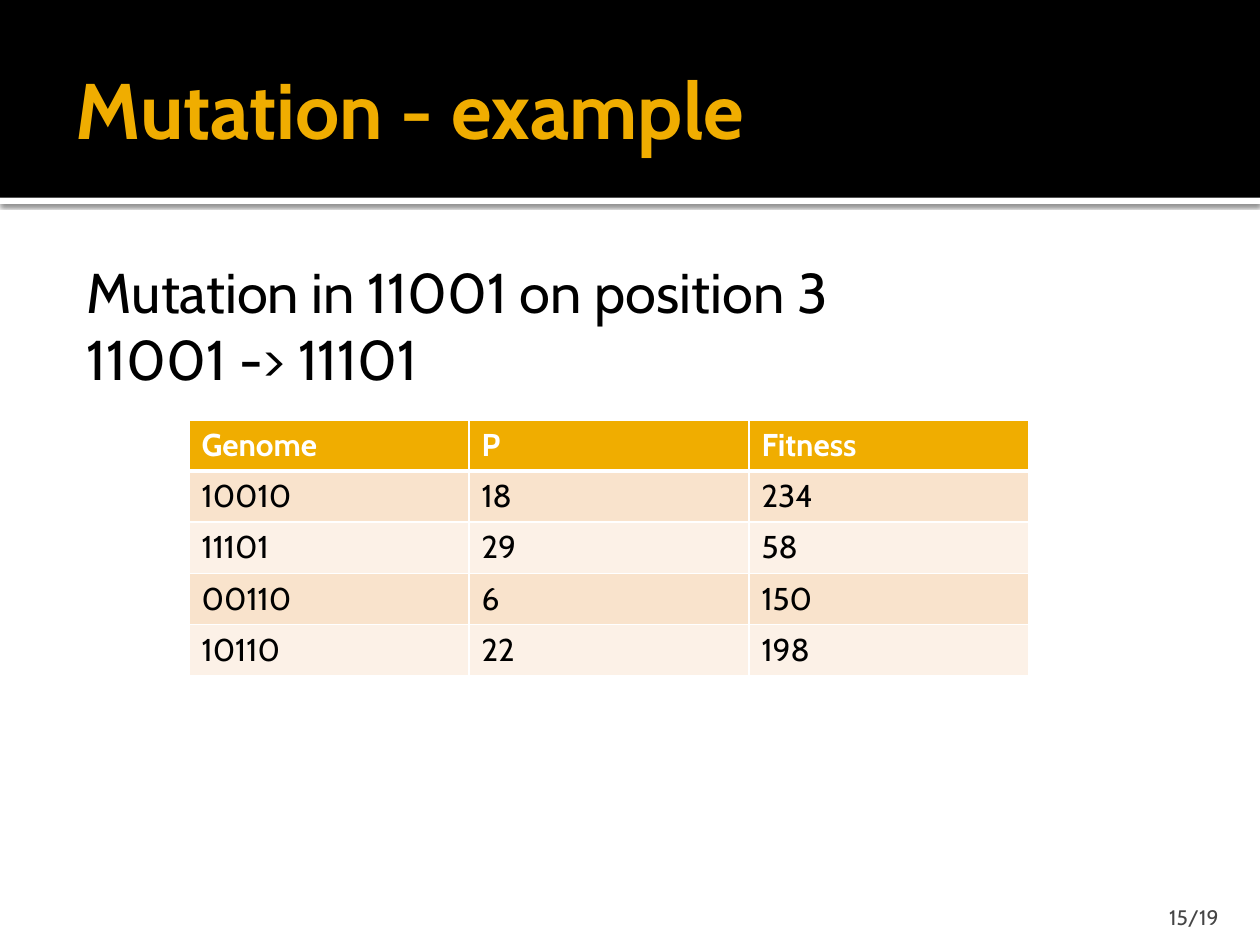
import pptx
import pptx.util
import pptx.dml.color
import pptx.enum.shapes
import pptx.enum.text
import pptx.oxml
import pptx.oxml.ns

Pt = pptx.util.Pt
RGB = pptx.dml.color.RGBColor.from_string
Align = pptx.enum.text.PP_ALIGN
Anchor = pptx.enum.text.MSO_ANCHOR
ns = pptx.oxml.ns.nsdecls("a")
hues = {"gold": "F0AD00", "black": "000000", "white": "FFFFFF",
        "peach": "F9E3CC", "cream": "FCF1E7", "grey": "454545"}


def style(para, size, hue, bold=False, align=Align.LEFT):
    form = {"size": Pt(size), "name": "Cabin", "bold": bold}
    for key, val in form.items():
        setattr(para.font, key, val)
    para.font.color.rgb = RGB(hues[hue])
    para.alignment = align


def place(shape, box, pads, anchor):
    for key, val in zip(("left", "top", "width", "height"), box):
        setattr(shape, key, Pt(val))
    frame = shape.text_frame
    form = dict(zip(("margin_left", "margin_top", "margin_right", "margin_bottom"), map(Pt, pads)))
    form.update(word_wrap=True, vertical_anchor=anchor, auto_size=pptx.enum.text.MSO_AUTO_SIZE.NONE)
    for key, val in form.items():
        setattr(frame, key, val)
    return frame


deck = pptx.Presentation()
deck.slide_width, deck.slide_height = Pt(720), Pt(540)
slide = deck.slides.add_slide(deck.slide_layouts[1])
title, body = slide.placeholders

for top, high, hue in ((113, 3.6, "white"), (0, 113, "black")):
    band = slide.shapes.add_shape(
        pptx.enum.shapes.MSO_SHAPE.RECTANGLE, 0, Pt(top), Pt(720), Pt(high))
    band.fill.solid()
    band.fill.fore_color.rgb = RGB(hues[hue])
    band.line.fill.background()
    band.shadow.inherit = False
    title.element.addprevious(band.element)
    if hue == "white":
        glow = band.element.spPr.find(pptx.oxml.ns.qn("a:effectLst"))
        glow.append(pptx.oxml.parse_xml(
            f'<a:outerShdw {ns} blurRad="{Pt(2.5)}" dist="{Pt(0.8)}" dir="5400000">'
            f'<a:srgbClr val="{hues["black"]}"><a:alpha val="60000"/></a:srgbClr></a:outerShdw>'))

frame = place(title, (36, 12.24, 648, 98.64), (7.2, 3.6, 3.6, 3.6), Anchor.MIDDLE)
frame.text = "Mutation - example"
style(frame.paragraphs[0], 45, "gold", True)

frame = place(body, (36, 139.68, 648, 364.32), (4.32, 7.2, 7.2, 3.6), Anchor.TOP)
frame.text = "Mutation in 11001 on position 3\n11001 -> 11101"
for para in frame.paragraphs:
    style(para, 32, "black")
    para.space_before = Pt(0)
    props = para._p.get_or_add_pPr()
    props.set("marL", str(Pt(34.56)))
    props.set("indent", str(Pt(-25.2)))
    props.append(pptx.oxml.parse_xml(f"<a:buNone {ns}/>"))

data = (("Genome", "P", "Fitness"),
        ("10010", "18", "234"),
        ("11101", "29", "58"),
        ("00110", "6", "150"),
        ("10110", "22", "198"))
grid = slide.shapes.add_table(5, 3, Pt(108), Pt(240), Pt(480), Pt(146)).table
for r, row in enumerate(data):
    back = "gold" if r == 0 else ("cream", "peach")[r % 2]
    for c, word in enumerate(row):
        cell = grid.cell(r, c)
        cell.text = word
        style(cell.text_frame.paragraphs[0], 18, "black" if r else "white", r == 0)
        props = cell._tc.get_or_add_tcPr()
        for side in "LRTB":
            thick = 3 if (r, side) in ((0, "B"), (1, "T")) else 1
            props.append(pptx.oxml.parse_xml(
                f'<a:ln{side} {ns} w="{Pt(thick)}"><a:solidFill>'
                f'<a:srgbClr val="{hues["white"]}"/></a:solidFill></a:ln{side}>'))
        cell.fill.solid()
        cell.fill.fore_color.rgb = RGB(hues[back])

box = (645.84, 509.76, 57.6, 21.6)
page = slide.shapes.add_textbox(*map(Pt, box))
frame = place(page, box, (7.2, 3.6, 7.2, 0), Anchor.BOTTOM)
frame.text = "15/19"
style(frame.paragraphs[0], 12, "grey", align=Align.RIGHT)

deck.save("out.pptx")
